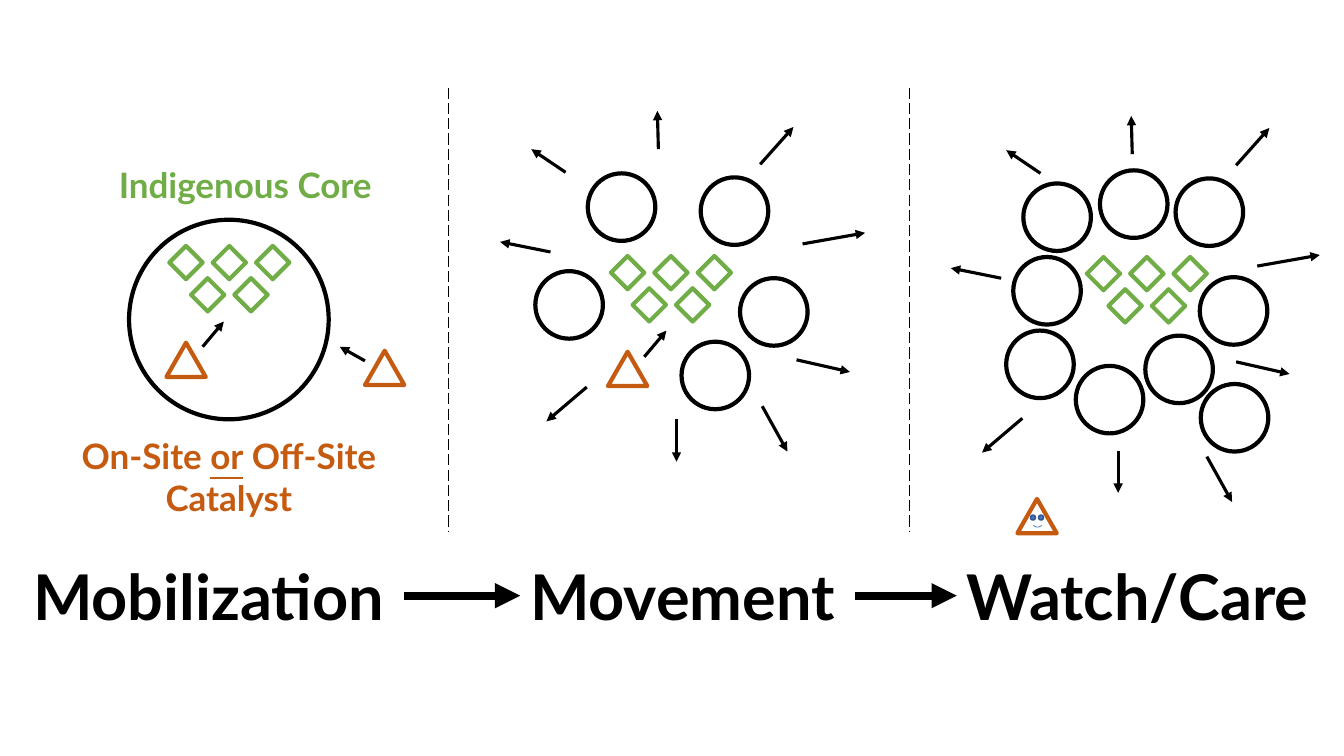
from dataclasses import dataclass

from lxml import etree
from pptx import Presentation
from pptx.dml.color import RGBColor
from pptx.enum.dml import MSO_LINE
from pptx.enum.shapes import MSO_CONNECTOR, MSO_SHAPE
from pptx.enum.text import MSO_AUTO_SIZE, PP_ALIGN
from pptx.oxml.ns import qn
from pptx.shapes.autoshape import Shape
from pptx.shapes.connector import Connector
from pptx.slide import Slide
from pptx.util import Inches, Pt

BLACK = RGBColor(0x00, 0x00, 0x00)
GREEN = RGBColor(0x70, 0xAD, 0x47)
ORANGE = RGBColor(0xC5, 0x5A, 0x11)
BLUE = RGBColor(0x44, 0x72, 0xC4)
DARK_BLUE = RGBColor(0x32, 0x54, 0x91)

ELLIPSE = MSO_SHAPE.OVAL
DIAMOND = MSO_SHAPE.DIAMOND
TRIANGLE = MSO_SHAPE.ISOSCELES_TRIANGLE
ARC = MSO_SHAPE.ARC
STRAIGHT = MSO_CONNECTOR.STRAIGHT
LONG_DASH = MSO_LINE.LONG_DASH
LEFT, CENTER = PP_ALIGN.LEFT, PP_ALIGN.CENTER
FIT_SHAPE = MSO_AUTO_SIZE.SHAPE_TO_FIT_TEXT

FONT = "Lato"
SIDE_LEFT, SIDE_RIGHT = 1, 3
GROUP_SIZE = 0.67
MEMBER_SIZE = 0.33
MEMBER_STEP = 0.43
DIVIDERS = (4.45, 9.02)

Point = tuple[float, float]


@dataclass
class Run:
    text: str
    underline: bool = False


@dataclass
class Stage:
    title: str
    left: float
    width: float
    core: Point
    catalysts: list[Point]
    groups: list[Point]
    ray_starts: list[Point]


# Outward arrows, clockwise from the upper left
RAYS = [(-0.34, -0.23), (-0.01, -0.38), (0.33, -0.37), (0.62, -0.11), (0.53, 0.12),
        (0.25, 0.45), (0, 0.42), (-0.4, 0.34), (-0.5, -0.1)]

STAGES = [
    Stage("Mobilization", 0.23, 3.78, (1.68, 2.44), [(1.65, 3.4), (3.62, 3.48)], [], []),
    Stage("Movement", 5.16, 3.32, (6.06, 2.54), [(6.03, 3.49)],
          [(6.95, 1.76), (5.31, 2.69), (6.76, 3.39), (7.34, 2.76), (5.83, 1.72)],
          [(5.61, 1.71), (6.53, 1.48), (7.54, 1.63), (7.96, 2.42), (7.9, 3.57),
           (7.56, 4.03), (6.71, 4.16), (5.82, 3.84), (5.46, 2.5)]),
    Stage("Watch/Care", 9.49, 3.69, (10.78, 2.55), [(10.09, 4.95)],
          [(10.91, 1.69), (11.66, 1.77), (10.05, 2.55), (9.98, 3.28), (10.67, 3.63),
           (11.36, 3.33), (11.9, 2.75), (11.91, 3.81), (10.15, 1.82)],
          [(10.32, 1.72), (11.23, 1.53), (12.26, 1.64), (12.47, 2.64), (12.26, 3.59),
           (11.97, 4.53), (11.09, 4.47), (10.14, 4.15), (9.93, 2.76)]),
]

# Arrows from a catalyst towards the core
INWARD = [((2.01, 3.44), (2.22, 3.19)), ((3.62, 3.58), (3.37, 3.44)),
          ((6.39, 3.54), (6.61, 3.28))]


def add_text(s: Slide, at: Point, width: float, height: float, lines: list[list[Run]],
             size: float, color: RGBColor, align: PP_ALIGN = LEFT) -> Shape:
    box = s.shapes.add_textbox(Inches(at[0]), Inches(at[1]), Inches(width), Inches(height))
    tf = box.text_frame
    tf.word_wrap = False
    tf.auto_size = FIT_SHAPE
    for i, line in enumerate(lines):
        p = tf.add_paragraph() if i else tf.paragraphs[0]
        p.alignment = align
        for run in line:
            r = p.add_run()
            r.text = run.text
            r.font.name = FONT
            r.font.size = Pt(size)
            r.font.bold = True
            r.font.underline = run.underline
            r.font.color.rgb = color
    return box


def add_outline(s: Slide, kind: MSO_SHAPE, at: Point, width: float, height: float,
                color: RGBColor, weight: float = 3) -> Shape:
    sp = s.shapes.add_shape(kind, Inches(at[0]), Inches(at[1]), Inches(width), Inches(height))
    sp.shadow.inherit = False
    sp.fill.background()
    sp.line.color.rgb = color
    sp.line.width = Pt(weight)
    return sp


def add_line(s: Slide, start: Point, end: Point, weight: float) -> Connector:
    line = s.shapes.add_connector(STRAIGHT, *(Inches(v) for v in (*start, *end)))
    line.line.color.rgb = BLACK
    line.line.width = Pt(weight)
    etree.SubElement(line._element.spPr, qn("a:effectLst"))
    return line


def add_arrow(s: Slide, start: Point, end: Point, weight: float = 2.25) -> Connector:
    arrow = add_line(s, start, end, weight)
    etree.SubElement(arrow.line._get_or_add_ln(), qn("a:tailEnd"), type="triangle")
    return arrow


def add_core(s: Slide, at: Point) -> None:
    """Draw three diamonds above two, the lower row shifted by half a step."""
    for row, count in enumerate((3, 2)):
        for col in range(count):
            corner = (at[0] + (col + row / 2) * MEMBER_STEP, at[1] + row * 0.32)
            add_outline(s, DIAMOND, corner, MEMBER_SIZE, MEMBER_SIZE, GREEN)


def add_stage(s: Slide, stage: Stage) -> Shape:
    """Draw one stage and return its title box."""
    for group in stage.groups:
        add_outline(s, ELLIPSE, group, GROUP_SIZE, GROUP_SIZE, BLACK)
    add_core(s, stage.core)
    for catalyst in stage.catalysts:
        add_outline(s, TRIANGLE, catalyst, 0.39, 0.34, ORANGE)
    for (x, y), (dx, dy) in zip(stage.ray_starts, RAYS):
        add_arrow(s, (x, y), (x + dx, y + dy))
    return add_text(s, (stage.left, 5.48), stage.width, 0.86, [[Run(stage.title)]], 45, BLACK)


def add_face(s: Slide) -> None:
    for x in (10.22, 10.3):
        eye = add_outline(s, ELLIPSE, (x, 5.11), 0.05, 0.05, DARK_BLUE, 1)
        eye.fill.solid()
        eye.fill.fore_color.rgb = BLUE
    smile = add_outline(s, ARC, (10.23, 5.11), 0.12, 0.12, BLUE, 0.5)
    smile.rotation = 135


def main() -> None:
    prs = Presentation()
    prs.slide_width, prs.slide_height = Inches(13.33), Inches(7.5)
    s = prs.slides.add_slide(prs.slide_layouts[6])

    add_outline(s, ELLIPSE, (1.28, 2.18), 1.98, 1.98, BLACK)
    add_text(s, (1.08, 1.57), 2.76, 0.52, [[Run("Indigenous Core")]], 25, GREEN)
    add_text(s, (0.64, 4.26), 3.26, 0.94,
             [[Run("On-Site "), Run("or", True), Run(" Off-Site")], [Run("Catalyst")]],
             25, ORANGE, CENTER)

    titles = [add_stage(s, stage) for stage in STAGES]
    for before, after in zip(titles, titles[1:]):
        arrow = add_arrow(s, (0, 0), (1, 0), 6)
        arrow.begin_connect(before, SIDE_RIGHT)
        arrow.end_connect(after, SIDE_LEFT)

    for start, end in INWARD:
        add_arrow(s, start, end)
    add_face(s)
    for x in DIVIDERS:
        add_line(s, (x, 0.87), (x, 5.28), 1).line.dash_style = LONG_DASH

    prs.save("out.pptx")


if __name__ == "__main__":
    main()
